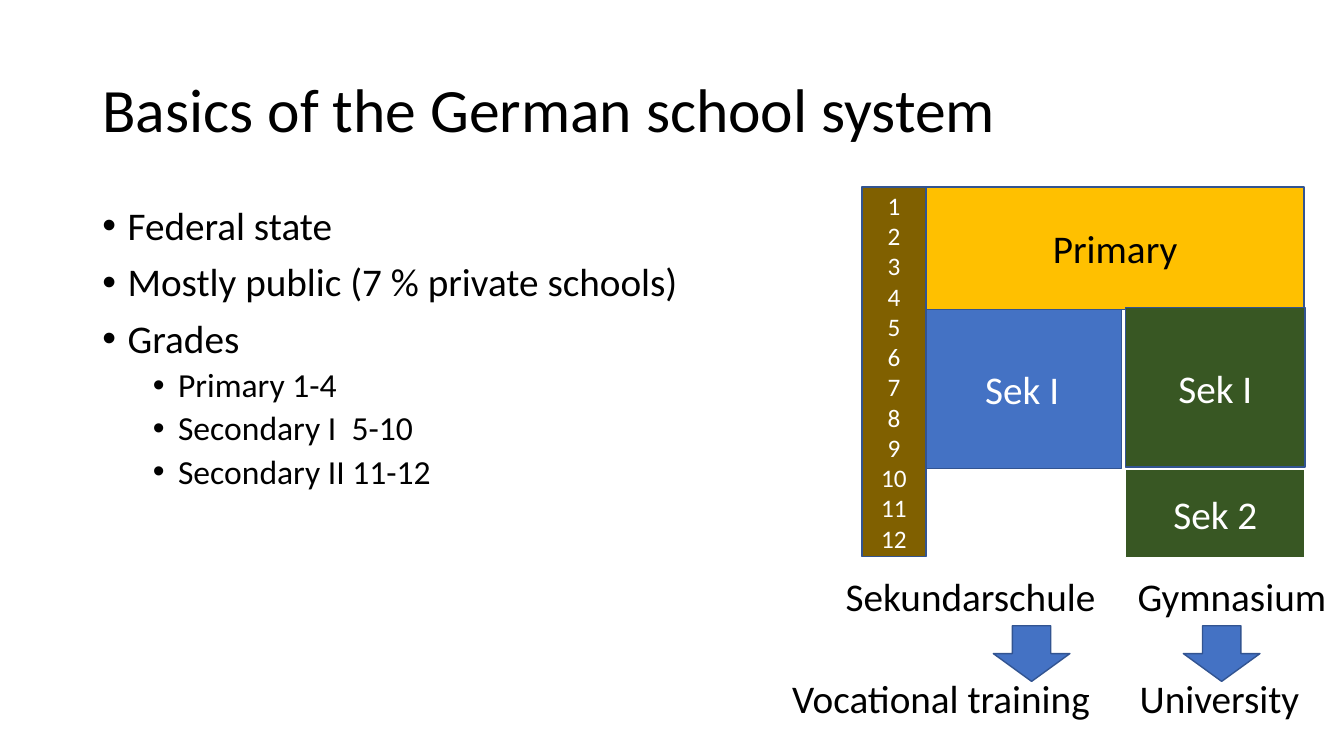
from lxml import etree
from pptx import Presentation
from pptx.dml.color import RGBColor
from pptx.enum.shapes import MSO_SHAPE as SHAPE
from pptx.enum.text import MSO_ANCHOR as ANCHOR, PP_ALIGN as ALIGN
from pptx.oxml.ns import qn
from pptx.util import Pt

PX = 9525
BLACK = RGBColor(0x00, 0x00, 0x00)
WHITE = RGBColor(0xFF, 0xFF, 0xFF)
BLUE = RGBColor(0x44, 0x72, 0xC4)
OUTLINE = RGBColor(0x32, 0x54, 0x91)
GREEN = RGBColor(0x38, 0x57, 0x23)
YELLOW = RGBColor(0xFF, 0xC0, 0x00)
BROWN = RGBColor(0x80, 0x60, 0x00)

BULLETS = [
    ("Federal state", 0),
    ("Mostly public (7 % private schools)", 0),
    ("Grades", 0),
    ("Primary 1-4", 1),
    ("Secondary I  5-10", 1),
    ("Secondary II 11-12", 1),
]


def emu(*lengths):
    return [n * PX for n in lengths]


def write(p, text, size=28, color=BLACK, align=ALIGN.LEFT):
    p.alignment = align
    r = p.add_run()
    r.text = text
    r.font.name = "Calibri"
    r.font.size = Pt(size)
    r.font.color.rgb = color


def place(sp, left, top, width, height):
    sp.left, sp.top, sp.width, sp.height = emu(left, top, width, height)


def add_bullet(p, indent):
    pPr = p._p.get_or_add_pPr()
    pPr.set("marL", str(indent * PX))
    pPr.set("indent", str(-24 * PX))
    etree.SubElement(pPr, qn("a:buFont")).set("typeface", "Arial")
    etree.SubElement(pPr, qn("a:buChar")).set("char", "•")


def add_title(s, text, *box):
    sp = s.shapes.title
    place(sp, *box)
    tf = sp.text_frame
    tf.vertical_anchor = ANCHOR.MIDDLE
    p = tf.paragraphs[0]
    p.line_spacing = 0.9
    write(p, text, size=44)


def add_list(s, items, *box):
    sp = s.placeholders[1]
    place(sp, *box)
    tf = sp.text_frame
    for i, (text, level) in enumerate(items):
        p = tf.add_paragraph() if i else tf.paragraphs[0]
        p.level = level
        p.line_spacing = 0.9
        p.space_before = Pt(5 if level else 10)
        write(p, text, size=24 if level else 28)
        add_bullet(p, 24 + 48 * level)


def add_block(s, box, fill, lines=(), kind=SHAPE.RECTANGLE, line=OUTLINE, **fmt):
    sp = s.shapes.add_shape(kind, *emu(*box))
    sp.shadow.inherit = False
    sp.fill.solid()
    sp.fill.fore_color.rgb = fill
    sp.line.color.rgb = line
    sp.line.width = Pt(1)
    tf = sp.text_frame
    tf.vertical_anchor = ANCHOR.MIDDLE
    for i, text in enumerate(lines):
        p = tf.add_paragraph() if i else tf.paragraphs[0]
        write(p, text, align=ALIGN.CENTER, **{"color": WHITE, **fmt})


def add_label(s, text, *box):
    tf = s.shapes.add_textbox(*emu(*box)).text_frame
    tf.word_wrap = True
    write(tf.paragraphs[0], text)


def add_school_chart(s, left, top):
    """Draw the grade column and the school stages beside it."""
    add_block(s, (left + 58, top + 116, 189, 152), BLUE, ["Sek I"])
    add_block(s, (left + 251, top + 269, 171, 84), GREEN, ["Sek 2"], line=WHITE)
    add_block(s, (left + 61, top, 360, 117), YELLOW, ["Primary"], color=BLACK)
    add_block(s, (left + 251, top + 115, 171, 152), GREEN, ["Sek I"])
    grades = [str(grade) for grade in range(1, 13)]
    add_block(s, (left, top, 61, 352), BROWN, grades, size=18)


def add_pathway(s, school, goal, left, top, width, school_dx, arrow_dx):
    """Draw a school name, an arrow and what the school leads to."""
    add_label(s, school, left + school_dx, top, width - school_dx, 54)
    add_block(s, (left + arrow_dx, top + 56, 73, 53), BLUE, kind=SHAPE.DOWN_ARROW)
    add_label(s, goal, left, top + 97, width, 54)


def main():
    prs = Presentation()
    prs.slide_width, prs.slide_height = emu(1280, 720)
    s = prs.slides.add_slide(prs.slide_layouts[1])
    add_title(s, "Basics of the German school system", 88, 38, 1104, 139)
    add_list(s, BULLETS, 88, 192, 1104, 457)
    add_school_chart(s, 821, 178)
    add_pathway(s, "Sekundarschule", "Vocational training", 745, 540, 320, 51, 201)
    add_pathway(s, "Gymnasium", "University", 1076, 540, 204, -2, 51)
    prs.save("out.pptx")


if __name__ == "__main__":
    main()
